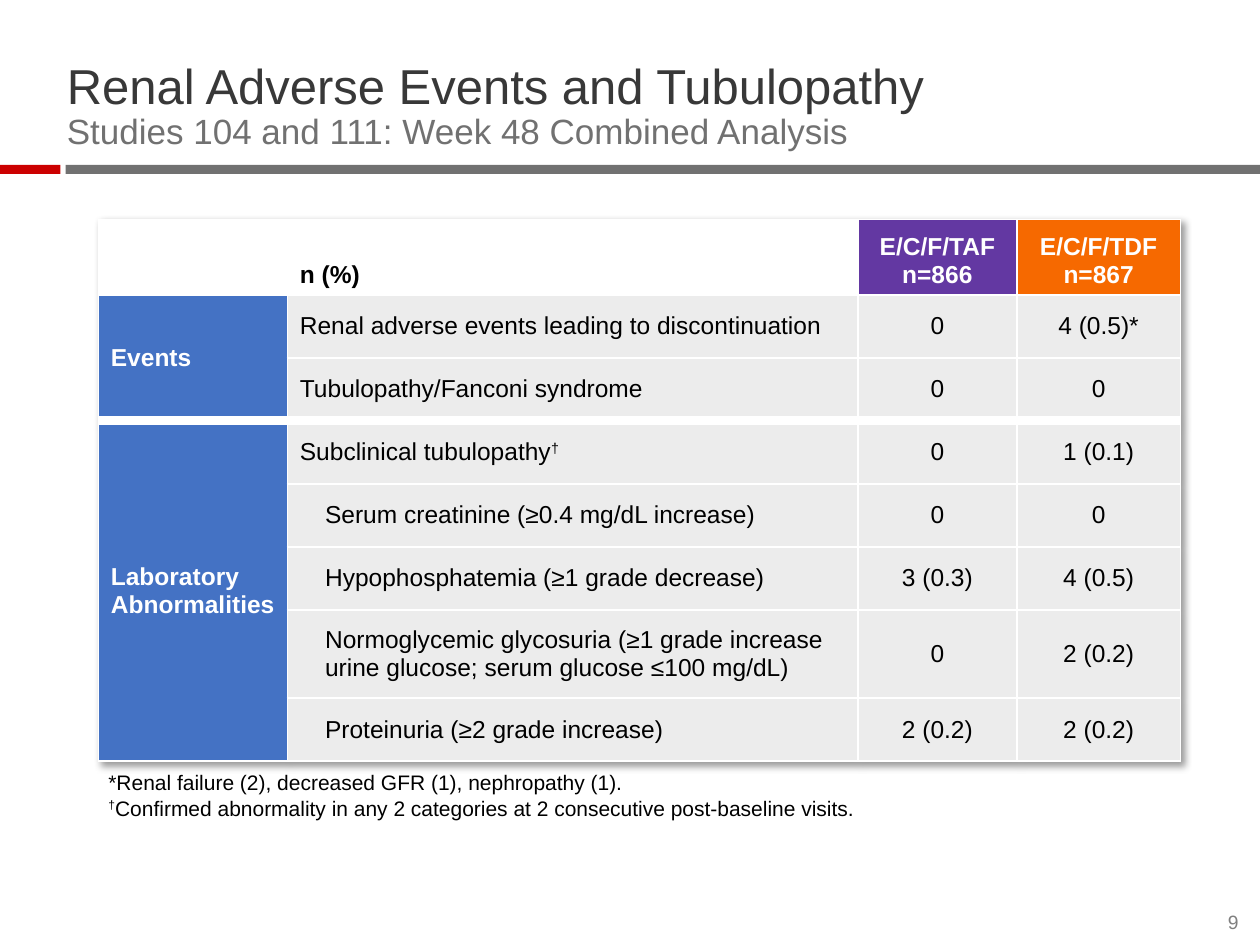
import lxml.etree
import pptx
import pptx.dml.color
import pptx.enum.shapes
import pptx.enum.text
import pptx.oxml.ns
import pptx.util

RGB = pptx.dml.color.RGBColor
ALIGN = pptx.enum.text.PP_ALIGN
ANCHOR = pptx.enum.text.MSO_ANCHOR
Pt = pptx.util.Pt
qn = pptx.oxml.ns.qn

WHITE = RGB(0xFF, 0xFF, 0xFF)
BLACK = RGB(0x00, 0x00, 0x00)
DARK = RGB(0x38, 0x38, 0x38)
GRAY = RGB(0x71, 0x71, 0x71)
PALE = RGB(0xEC, 0xEC, 0xEC)
MID = RGB(0x7F, 0x7F, 0x7F)
RED = RGB(0xCC, 0x00, 0x00)
BLUE = RGB(0x44, 0x72, 0xC4)
PURPLE = RGB(0x63, 0x38, 0xA2)
ORANGE = RGB(0xF6, 0x69, 0x00)
PX = 9144  # 100 px to the inch


def style(para, size, color, bold=False, align=ALIGN.LEFT):
    para.alignment = align
    font = para.font
    font.name, font.size, font.bold = "Arial", Pt(size), bold
    font.color.rgb = color


def write(para, text):
    """Add text to a paragraph, with each dagger raised and \\n as a line break."""
    for i, line in enumerate(text.split("\n")):
        if i:
            para.add_line_break()
        for j, part in enumerate(line.split("†")):
            if j:
                run = para.add_run()
                run.text = "†"
                run._r.get_or_add_rPr().set("baseline", "30000")
            if part:
                para.add_run().text = part


deck = pptx.Presentation()
deck.slide_width, deck.slide_height = 1000 * PX, 750 * PX
slide = deck.slides.add_slide(deck.slide_layouts[5])
shapes = slide.shapes

# Rule under the title
for left, width, color in [(52, 948, GRAY), (0, 48, RED)]:
    bar = shapes.add_shape(pptx.enum.shapes.MSO_SHAPE.RECTANGLE,
                           left * PX, 131 * PX, width * PX, 7 * PX)
    bar.shadow.inherit = False
    bar.fill.solid()
    bar.fill.fore_color.rgb = color
    bar.line.fill.background()

# Title, footnote and page number
title = shapes.title
title.left, title.top, title.width, title.height = 53 * PX, 47 * PX, 900 * PX, 74 * PX
note = shapes.add_textbox(86 * PX, 614 * PX, 665 * PX, 37 * PX)
page = shapes.add_textbox(956 * PX, 723 * PX, 27 * PX, 18 * PX)
for box, text, size, color, align in [
    (title, "Renal Adverse Events and Tubulopathy\n"
            "Studies 104 and 111: Week 48 Combined Analysis", 28, DARK, ALIGN.LEFT),
    (note, "*Renal failure (2), decreased GFR (1), nephropathy (1).\n"
           "†Confirmed abnormality in any 2 categories at 2 consecutive "
           "post-baseline visits.", 12, BLACK, ALIGN.LEFT),
    (page, "9", 11, MID, ALIGN.RIGHT),
]:
    frame = box.text_frame
    frame.word_wrap = True
    frame.auto_size = pptx.enum.text.MSO_AUTO_SIZE.NONE
    frame.vertical_anchor = ANCHOR.BOTTOM
    frame.margin_left = frame.margin_right = frame.margin_top = frame.margin_bottom = 0
    style(frame.paragraphs[0], size, color, align=align)
    write(frame.paragraphs[0], text)
head = title.text_frame.paragraphs[0]
head.line_spacing = 0.9
head.runs[1].font.size = Pt(20)
head.runs[1].font.color.rgb = GRAY

# Table
ROWS = [
    ("", "n (%)", "E/C/F/TAF\nn=866", "E/C/F/TDF\nn=867"),
    ("Events", "Renal adverse events leading to discontinuation", "0", "4 (0.5)*"),
    ("", "Tubulopathy/Fanconi syndrome", "0", "0"),
    ("Laboratory Abnormalities", "Subclinical tubulopathy†", "0", "1 (0.1)"),
    ("", "Serum creatinine (≥0.4 mg/dL increase)", "0", "0"),
    ("", "Hypophosphatemia (≥1 grade decrease)", "3 (0.3)", "4 (0.5)"),
    ("", "Normoglycemic glycosuria (≥1 grade increase urine glucose; "
         "serum glucose ≤100 mg/dL)", "0", "2 (0.2)"),
    ("", "Proteinuria (≥2 grade increase)", "2 (0.2)", "2 (0.2)"),
]
WIDE = [150, 453, 126, 130]
TALL = [60, 50, 50, 50, 50, 50, 70, 50]
HEADS = [WHITE, WHITE, PURPLE, ORANGE]
LAB = 3  # first row of the second group

holder = shapes.add_table(len(ROWS), len(WIDE), 78 * PX, 174 * PX,
                          sum(WIDE) * PX, sum(TALL) * PX)
table = holder.table
for col, width in zip(table.columns, WIDE):
    col.width = width * PX
for row, height in zip(table.rows, TALL):
    row.height = height * PX
table.cell(1, 0).merge(table.cell(LAB - 1, 0))
table.cell(LAB, 0).merge(table.cell(len(ROWS) - 1, 0))

for r, row in enumerate(ROWS):
    for c, text in enumerate(row):
        cell = table.cell(r, c)
        props = cell._tc.get_or_add_tcPr()
        foot = r == LAB - 1 or (r == 1 and c == 0)
        edges = {"lnL": 1 if c else 0, "lnR": 1 if c < len(WIDE) - 1 else 0,
                 "lnT": 6 if r == LAB else 1 if r else 0,
                 "lnB": 6 if foot else 1 if r < len(ROWS) - 1 else 0}
        for tag, width in edges.items():
            if width:
                line = lxml.etree.SubElement(props, qn("a:" + tag), w=str(Pt(width)))
                fill = lxml.etree.SubElement(line, qn("a:solidFill"))
                lxml.etree.SubElement(fill, qn("a:srgbClr"), val=str(WHITE))
        cell.fill.solid()
        cell.fill.fore_color.rgb = HEADS[c] if r == 0 else PALE if c else BLUE
        cell.vertical_anchor = ANCHOR.MIDDLE if r else ANCHOR.BOTTOM
        cell.margin_left = (30 if c == 1 and r > LAB else 10) * PX
        cell.margin_right = 10 * PX
        cell.margin_top = cell.margin_bottom = 5 * PX
        para = cell.text_frame.paragraphs[0]
        light = c == 0 or (r == 0 and c > 1)
        style(para, 14, WHITE if light else BLACK, r == 0 or c == 0,
              ALIGN.CENTER if c > 1 else ALIGN.LEFT)
        if r:
            para.space_after = Pt(2)
        else:
            para.space_before = Pt(3)
        write(para, text)

# Soft shadow around the table
frame = table._tbl.tblPr
effect = lxml.etree.Element(qn("a:effectLst"))
frame.insert(0, effect)
shade = lxml.etree.SubElement(effect, qn("a:outerShdw"), blurRad=str(Pt(4)),
                              dist=str(Pt(3)), dir="2700000", algn="tl")
tint = lxml.etree.SubElement(shade, qn("a:srgbClr"), val=str(BLACK))
lxml.etree.SubElement(tint, qn("a:alpha"), val="40000")

deck.save("out.pptx")
